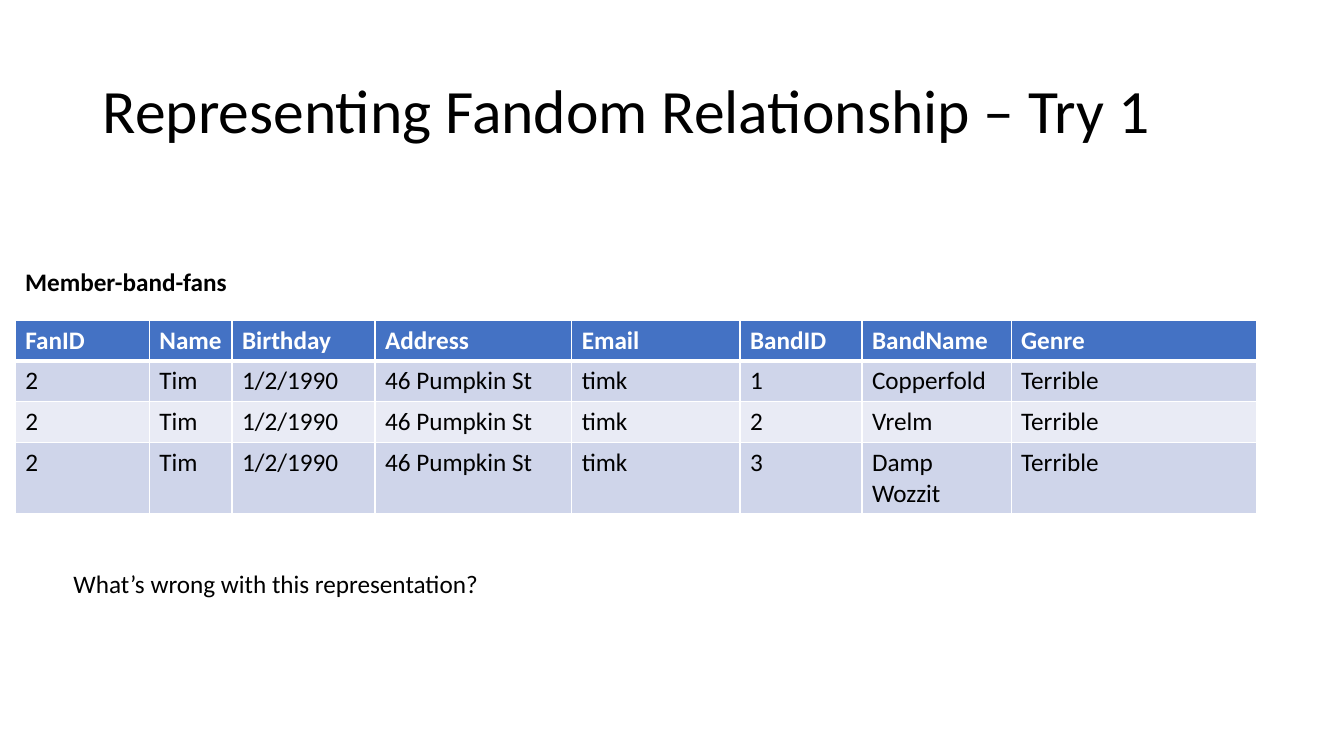
import pptx
import pptx.dml.color
import pptx.enum.text
import pptx.oxml
import pptx.oxml.ns
import pptx.util

COLORS = {"text": "000000", "line": "FFFFFF", "head": "4472C4",
          "odd": "CFD5EA", "even": "E9EBF5"}
FONT = "Calibri"
BODY_SIZE = 18
MARGIN = 1.13

HEADER = ["FanID", "Name", "Birthday", "Address", "Email", "BandID", "BandName", "Genre"]
FAN = ["2", "Tim", "1/2/1990", "46 Pumpkin St", "timk"]
BANDS = ["Copperfold", "Vrelm", "Damp Wozzit"]
COLUMN_WIDTHS = [9.98, 6.15, 10.65, 14.63, 12.53, 9.07, 11.1, 18.3]
ROW_HEIGHT = 5.41


def rgb(name):
    return pptx.dml.color.RGBColor.from_string(COLORS[name])


class SlideBuilder:
    """Places elements by percentages of the slide's width and height."""

    def __init__(self, prs):
        self.prs = prs
        self.slide = prs.slides.add_slide(prs.slide_layouts[6])

    def x(self, percent):
        return round(self.prs.slide_width * percent / 100)

    def y(self, percent):
        return round(self.prs.slide_height * percent / 100)

    def style(self, p, size=BODY_SIZE, bold=False, color="text"):
        p.font.name = FONT
        p.font.size = pptx.util.Pt(size)
        p.font.bold = bold
        p.font.color.rgb = rgb(color)

    def text(self, text, left, top, width, height, anchor="TOP", spacing=1.0, **style):
        sp = self.slide.shapes.add_textbox(
            self.x(left), self.y(top), self.x(width), self.y(height))
        tf = sp.text_frame
        tf.word_wrap = True
        tf.vertical_anchor = pptx.enum.text.MSO_ANCHOR[anchor]
        p = tf.paragraphs[0]
        p.text = text
        p.line_spacing = spacing
        self.style(p, **style)

    def borders(self, cell, **widths):
        tc_pr = cell._tc.get_or_add_tcPr()
        for i, side in enumerate("LRTB"):
            width = pptx.util.Pt(widths.get(side, 1))
            tc_pr.insert(i, pptx.oxml.parse_xml(
                f'<a:ln{side} {pptx.oxml.ns.nsdecls("a")} w="{width}"><a:solidFill>'
                f'<a:srgbClr val="{COLORS["line"]}"/></a:solidFill></a:ln{side}>'))

    def table(self, rows, left, top, widths, row_height):
        table = self.slide.shapes.add_table(
            len(rows), len(widths), self.x(left), self.y(top),
            self.x(sum(widths)), self.y(row_height * len(rows))).table
        for column, width in zip(table.columns, widths):
            column.width = self.x(width)
        for i, values in enumerate(rows):
            table.rows[i].height = self.y(row_height)
            fill = "head" if i == 0 else "odd" if i % 2 else "even"
            for j, value in enumerate(values):
                cell = table.cell(i, j)
                cell.fill.solid()
                cell.fill.fore_color.rgb = rgb(fill)
                self.borders(cell, T=3 if i == 1 else 1, B=3 if i == 0 else 1)
                p = cell.text_frame.paragraphs[0]
                p.text = value
                self.style(p, bold=i == 0, color="line" if i == 0 else "text")


def main():
    prs = pptx.Presentation()
    prs.slide_width = pptx.util.Inches(13.33)
    prs.slide_height = pptx.util.Inches(7.5)
    s = SlideBuilder(prs)
    s.text("Representing Fandom Relationship – Try 1", 6.9, 5.33, 86.27, 19.33,
           anchor="MIDDLE", spacing=0.9, size=44)
    rows = [HEADER] + [FAN + [str(n), band, "Terrible"] for n, band in enumerate(BANDS, 1)]
    s.table(rows, MARGIN, 42.33, COLUMN_WIDTHS, ROW_HEIGHT)
    s.text("What’s wrong with this representation?", 4.73, 74.53, 56.41, 5.33)
    s.text("Member-band-fans", MARGIN, 34.53, 42.31, 5.33, bold=True)
    prs.save("out.pptx")


if __name__ == "__main__":
    main()
